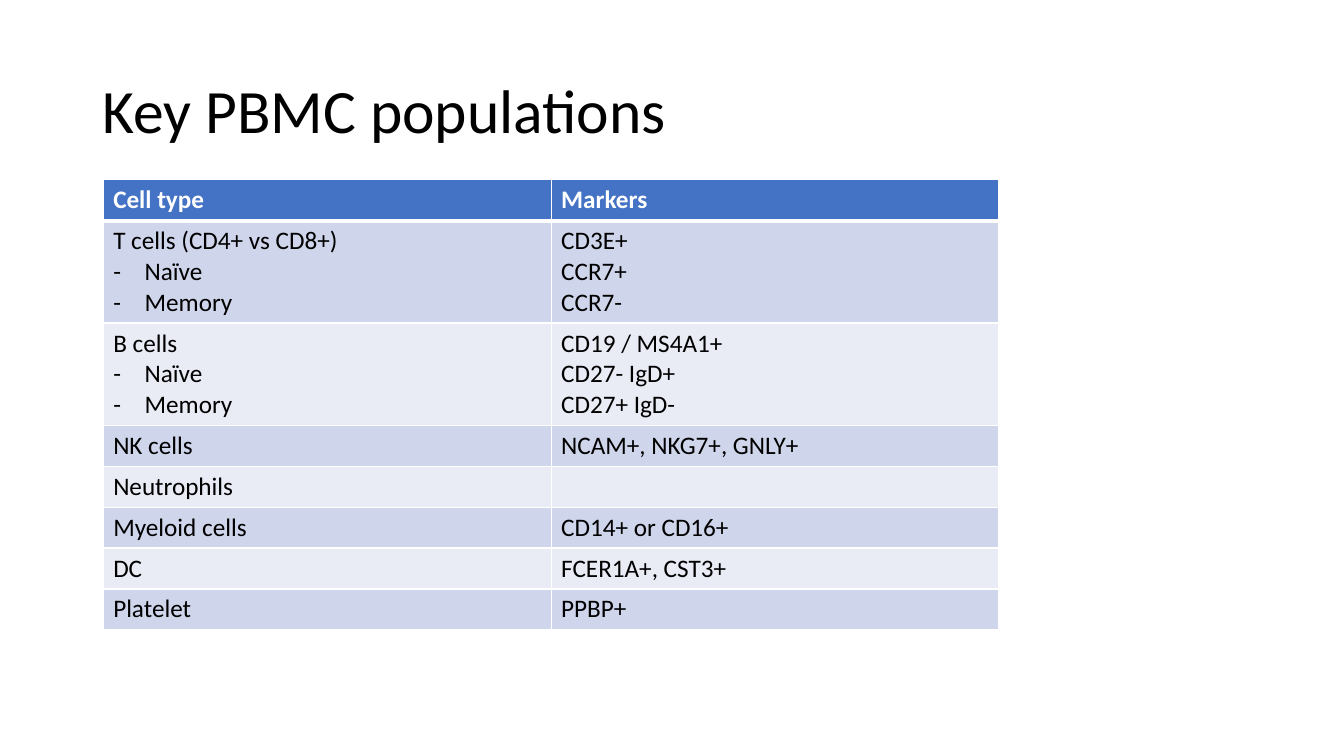
from dataclasses import dataclass

import lxml.etree
import pptx
import pptx.dml.color
import pptx.enum.text
import pptx.oxml.ns
import pptx.util

Cm = pptx.util.Cm
Pt = pptx.util.Pt


@dataclass(frozen=True)
class Theme:
    font: str = "Calibri"
    title_size: int = 44
    table_size: int = 18
    ink: str = "000000"
    paper: str = "FFFFFF"
    header: str = "4472C4"
    bands: tuple[str, str] = ("CFD5EA", "E9EBF5")


@dataclass(frozen=True)
class Population:
    cell_type: str
    markers: tuple[str, ...] = ()
    subtypes: tuple[str, ...] = ()


THEME = Theme()
SUBTYPES = ("Naïve", "Memory")
POPULATIONS = (
    Population("T cells (CD4+ vs CD8+)", ("CD3E+", "CCR7+", "CCR7-"), SUBTYPES),
    Population("B cells", ("CD19 / MS4A1+", "CD27- IgD+", "CD27+ IgD-"), SUBTYPES),
    Population("NK cells", ("NCAM+, NKG7+, GNLY+",)),
    Population("Neutrophils"),
    Population("Myeloid cells", ("CD14+ or CD16+",)),
    Population("DC", ("FCER1A+, CST3+",)),
    Population("Platelet", ("PPBP+",)),
)
COLUMN_WIDTH = 11.29
ROW_HEIGHT = 1.03
LINE_HEIGHT = 0.77
BULLET_INDENT = 0.79


def rgb(value: str) -> pptx.dml.color.RGBColor:
    return pptx.dml.color.RGBColor.from_string(value)


def add_element(parent, tag: str, **attributes: str):
    return lxml.etree.SubElement(parent, pptx.oxml.ns.qn(tag), attributes)


def style_paragraph(paragraph, size: int, color: str, bold: bool = False) -> None:
    paragraph.font.name = THEME.font
    paragraph.font.size = Pt(size)
    paragraph.font.bold = bold
    paragraph.font.color.rgb = rgb(color)


def add_dash(paragraph) -> None:
    properties = paragraph._p.get_or_add_pPr()
    indent = Cm(BULLET_INDENT)
    properties.set("marL", str(indent))
    properties.set("indent", str(-indent))
    add_element(properties, "a:buFont", typeface=THEME.font)
    add_element(properties, "a:buChar", char="-")


def add_borders(cell, bottom_width: int) -> None:
    properties = cell._tc.get_or_add_tcPr()
    for side, width in (("L", 1), ("R", 1), ("T", 1), ("B", bottom_width)):
        line = add_element(properties, f"a:ln{side}", w=str(Pt(width)))
        add_element(add_element(line, "a:solidFill"), "a:srgbClr", val=THEME.paper)


def fill_cell(cell, lines: tuple[str, ...], fill: str, header: bool = False,
              dashed: bool = False) -> None:
    add_borders(cell, 3 if header else 1)
    cell.fill.solid()
    cell.fill.fore_color.rgb = rgb(fill)
    cell.text_frame.text = "\n".join(lines)
    for index, paragraph in enumerate(cell.text_frame.paragraphs):
        if dashed and index:
            add_dash(paragraph)
        style_paragraph(paragraph, THEME.table_size,
                        THEME.paper if header else THEME.ink, header)


def add_title(slide, text: str) -> None:
    title = slide.shapes.title
    title.left, title.top = Cm(2.33), Cm(1.01)
    title.width, title.height = Cm(29.21), Cm(3.68)
    title.text_frame.text = text
    title.text_frame.vertical_anchor = pptx.enum.text.MSO_ANCHOR.MIDDLE
    heading = title.text_frame.paragraphs[0]
    heading.alignment = pptx.enum.text.PP_ALIGN.LEFT
    heading.line_spacing = 0.9
    style_paragraph(heading, THEME.title_size, THEME.ink)


def add_population_table(slide, populations: tuple[Population, ...]) -> None:
    row_count = len(populations) + 1
    table = slide.shapes.add_table(
        row_count, 2, Cm(2.6), Cm(4.53),
        Cm(2 * COLUMN_WIDTH), Cm(row_count * ROW_HEIGHT)).table
    for column in table.columns:
        column.width = Cm(COLUMN_WIDTH)

    # Header row
    for index, label in enumerate(("Cell type", "Markers")):
        fill_cell(table.cell(0, index), (label,), THEME.header, header=True)

    # Banded rows, taller where subtypes are listed
    for row, population in enumerate(populations, start=1):
        band = THEME.bands[(row - 1) % 2]
        table.rows[row].height = Cm(ROW_HEIGHT + len(population.subtypes) * LINE_HEIGHT)
        fill_cell(table.cell(row, 0), (population.cell_type, *population.subtypes),
                  band, dashed=True)
        fill_cell(table.cell(row, 1), population.markers, band)


def main() -> None:
    presentation = pptx.Presentation()
    presentation.slide_width, presentation.slide_height = Cm(33.87), Cm(19.05)
    slide = presentation.slides.add_slide(presentation.slide_layouts[5])
    add_title(slide, "Key PBMC populations")
    add_population_table(slide, POPULATIONS)
    presentation.save("out.pptx")


if __name__ == "__main__":
    main()
